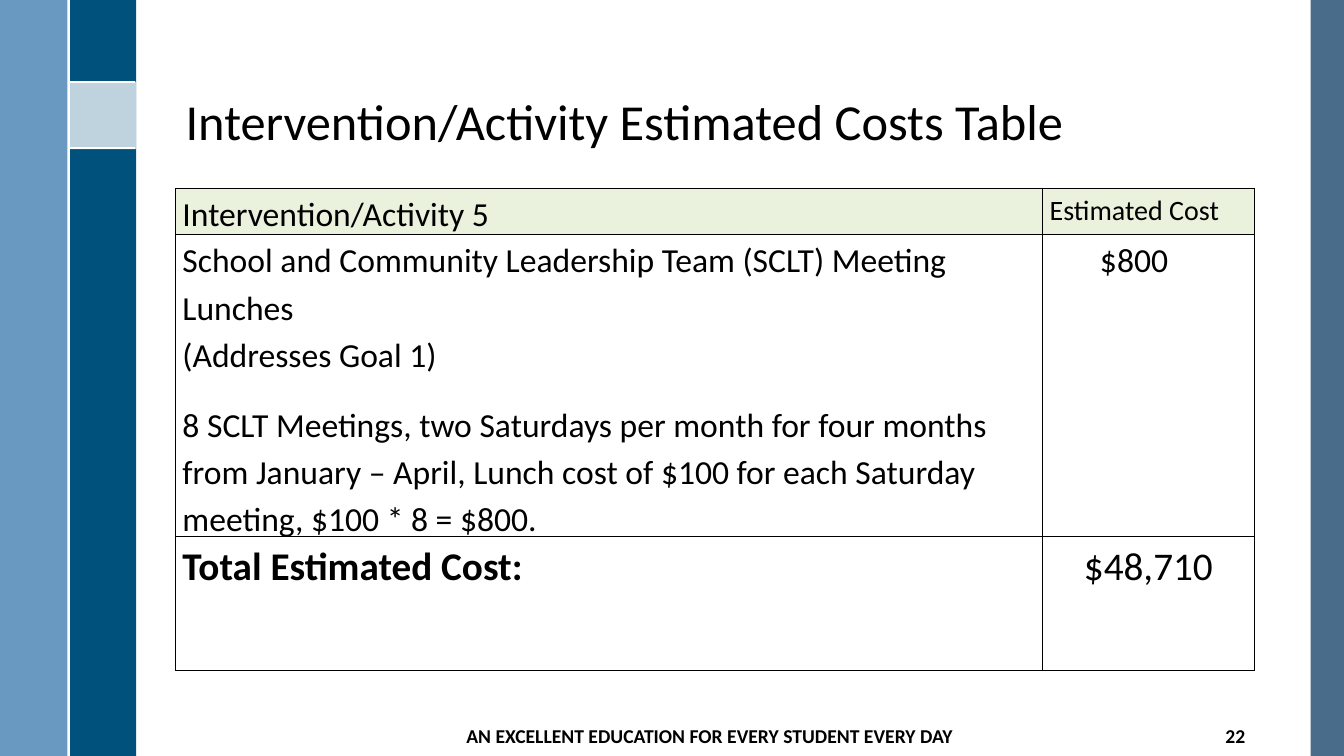
from lxml.etree import SubElement
from pptx import Presentation
from pptx.dml.color import RGBColor
from pptx.enum.shapes import MSO_CONNECTOR as LINE, MSO_SHAPE as SHAPE
from pptx.enum.text import MSO_ANCHOR as ANCHOR, MSO_AUTO_SIZE as AUTO, PP_ALIGN as ALIGN
from pptx.oxml import parse_xml
from pptx.oxml.ns import nsdecls, qn
from pptx.util import Inches, Pt

BLACK = RGBColor(0, 0, 0)
WHITE = RGBColor(0xFF, 0xFF, 0xFF)
NAVY = RGBColor(0x00, 0x51, 0x7C)
SLATE = RGBColor(0x35, 0x5D, 0x7E)
SKY = RGBColor(0x55, 0x8B, 0xB8)
GREEN = RGBColor(0xEA, 0xF1, 0xDD)


def write(para, text, size=24, bold=False, align=ALIGN.LEFT, space=1.0, before=0, left=0, hang=0):
    props = para._p.get_or_add_pPr()
    props.set("marL", str(Inches(left)))
    props.set("indent", str(Inches(hang)))
    para.alignment = align
    para.line_spacing = space
    para.space_before = Pt(before)
    run = para.add_run()
    run.text = text
    run.font.name = "Calibri"
    run.font.size = Pt(size)
    run.font.bold = bold
    run.font.color.rgb = BLACK


deck = Presentation()
deck.slide_width = Inches(13.33)
deck.slide_height = Inches(7.5)
slide = deck.slides.add_slide(deck.slide_layouts[5])
shapes = slide.shapes

bands = [
    (13, 0, 0.33, 7.5, SLATE, 90),
    (0.68, 0, 0.67, 7.5, NAVY, 100),
    (0, 0, 0.67, 7.5, SKY, 88),
    (0.68, 0.81, 0.67, 0.67, WHITE, 75),
]
for left, top, width, height, color, alpha in bands:
    band = shapes.add_shape(SHAPE.RECTANGLE, Inches(left), Inches(top), Inches(width), Inches(height))
    band.shadow.inherit = False
    band.line.fill.background()
    band.fill.solid()
    band.fill.fore_color.rgb = color
    if alpha < 100:
        tint = band._element.spPr.find(".//" + qn("a:srgbClr"))
        SubElement(tint, qn("a:alpha")).set("val", str(alpha * 1000))

for x1, y1, x2, y2 in [(0.68, 0.81, 1.34, 0.81), (0.68, 1.47, 1.34, 1.47), (0.68, 0, 0.68, 7.5)]:
    rule = shapes.add_connector(LINE.STRAIGHT, Inches(x1), Inches(y1), Inches(x2), Inches(y2))
    rule.line.color.rgb = WHITE
    rule.line.width = Pt(1.5)
    SubElement(rule._element.spPr, qn("a:effectLst"))

title = shapes.title
title.left, title.top = Inches(1.74), Inches(0.19)
title.width, title.height = Inches(10.7), Inches(1.36)
frame = title.text_frame
frame.auto_size = AUTO.NONE
frame.vertical_anchor = ANCHOR.BOTTOM
write(frame.paragraphs[0], "Intervention/Activity Estimated Costs Table",
      size=36, space=0.9, left=0.27, hang=-0.27)

footers = [
    (4.5, 5.08, "AN EXCELLENT EDUCATION FOR EVERY STUDENT EVERY DAY", ALIGN.CENTER),
    (11.78, 0.67, "22", ALIGN.RIGHT),
]
for left, width, text, align in footers:
    box = shapes.add_textbox(Inches(left), Inches(7.1), Inches(width), Inches(0.4))
    frame = box.text_frame
    frame.word_wrap = True
    frame.vertical_anchor = ANCHOR.MIDDLE
    write(frame.paragraphs[0], text, size=14, bold=True, align=align)

rows = [
    [[("Intervention/Activity 5", {})], [("Estimated Cost", {"size": 20})]],
    [
        [
            ("School and Community Leadership Team (SCLT) Meeting Lunches", {}),
            ("(Addresses Goal 1)", {}),
            ("8 SCLT Meetings, two Saturdays per month for four months from January – April, "
             "Lunch cost of $100 for each Saturday meeting, $100 * 8 = $800.", {"before": 16.5}),
        ],
        [("$800", {"left": 0.5})],
    ],
    [
        [("Total Estimated Cost:", {"size": 28, "bold": True})],
        [("$48,710", {"size": 28, "align": ALIGN.CENTER})],
    ],
]
costs = shapes.add_table(3, 2, Inches(1.74), Inches(1.87), Inches(10.7), Inches(4.33)).table
costs.first_row = False
costs.horz_banding = False
for col, width in zip(costs.columns, (8.6, 2.1)):
    col.width = Inches(width)
for row, height in zip(costs.rows, (0.38, 2.62, 1.33)):
    row.height = Inches(height)

for r, row in enumerate(rows):
    for c, lines in enumerate(row):
        cell = costs.cell(r, c)
        cell.margin_left = cell.margin_right = Inches(0.07)
        cell.margin_top = cell.margin_bottom = 0
        frame = cell.text_frame
        for i, (text, style) in enumerate(lines):
            para = frame.add_paragraph() if i else frame.paragraphs[0]
            write(para, text, space=1.15, **style)
        props = cell._tc.get_or_add_tcPr()
        for side in ("lnL", "lnR", "lnT", "lnB"):
            props.append(parse_xml(
                f'<a:{side} {nsdecls("a")} w="{Pt(1)}"><a:solidFill>'
                f'<a:srgbClr val="{BLACK}"/></a:solidFill></a:{side}>'))
        cell.fill.solid()
        cell.fill.fore_color.rgb = WHITE if r else GREEN

deck.save("out.pptx")
